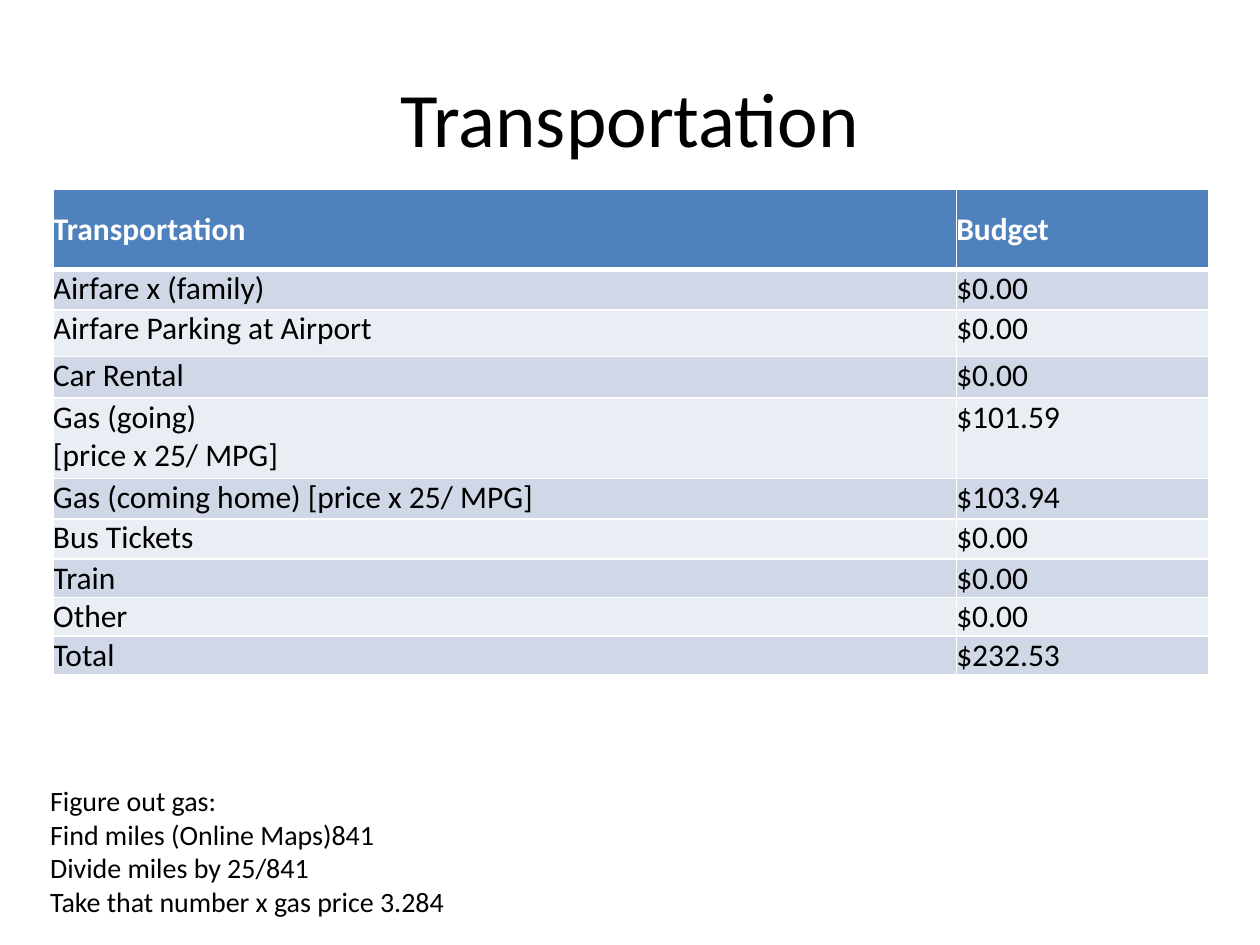
"""Builds a travel budget slide about transportation costs."""
from lxml import etree
from pptx import Presentation
from pptx import util as u
from pptx.dml import color
from pptx.enum import text
from pptx.oxml import ns

COLORS = {"ink": "000000", "paper": "FFFFFF", "header": "4F81BD",
          "odd": "D0D8E8", "even": "E9EDF4"}
BUDGET = [
    ("Transportation", "Budget", 0.64),
    ("Airfare x (family)", "$0.00", 0.32),
    ("Airfare Parking at Airport", "$0.00", 0.37),
    ("Car Rental", "$0.00", 0.33),
    ("Gas (going)\n[price x 25/ MPG]", "$101.59", 0.64),
    ("Gas (coming home) [price x 25/ MPG]", "$103.94", 0.32),
    ("Bus Tickets", "$0.00", 0.32),
    ("Train", "$0.00", 0.22),
    ("Other", "$0.00", 0.22),
    ("Total", "$232.53", 0.22),
]
COLUMN_WIDTHS = (7.17, 2)
GAS_STEPS = ("Figure out gas:\nFind miles (Online Maps)841\n"
             "Divide miles by 25/841\nTake that number x gas price 3.284")


def set_all(target, values):
    """Set each named attribute on the target."""
    for name, value in values.items():
        setattr(target, name, value)


def write(frame, words, size, ink="ink", bold=False, align=text.PP_ALIGN.LEFT):
    """Fill a text frame, one paragraph per line, in a single style."""
    frame.text = words
    for paragraph in frame.paragraphs:
        paragraph.alignment = align
        for run in paragraph.runs:
            set_all(run.font, {"name": "Calibri", "size": u.Pt(size), "bold": bold})
            run.font.color.rgb = color.RGBColor.from_string(COLORS[ink])


def add_words(slide, box, words, size, wrap=True, anchor=text.MSO_ANCHOR.TOP,
              fit=text.MSO_AUTO_SIZE.NONE, **style):
    """Add a text box at the given left, top, width and height."""
    frame = slide.shapes.add_textbox(*map(u.Inches, box)).text_frame
    write(frame, words, size, **style)
    set_all(frame, {"word_wrap": wrap, "vertical_anchor": anchor, "auto_size": fit})


def add_borders(cell, widths):
    """Draw white cell borders with a point width for each side."""
    properties = cell._tc.get_or_add_tcPr()
    for side, width in widths.items():
        line = etree.SubElement(properties, ns.qn(f"a:ln{side}"), w=str(u.Pt(width)))
        fill = etree.SubElement(line, ns.qn("a:solidFill"))
        etree.SubElement(fill, ns.qn("a:srgbClr"), val=COLORS["paper"])


def fill_cell(cell, words, row):
    """Style a budget cell according to its row."""
    header = row == 0
    shade = "header" if header else ("even", "odd")[row % 2]
    write(cell.text_frame, words, 18, "paper" if header else "ink", header)
    margins = dict.fromkeys(
        ("margin_left", "margin_top", "margin_right", "margin_bottom"), 0)
    anchor = text.MSO_ANCHOR.MIDDLE if header else text.MSO_ANCHOR.TOP
    set_all(cell, {**margins, "vertical_anchor": anchor})
    add_borders(cell, {"L": 1, "R": 1, "T": 3 if row == 1 else 1,
                       "B": 3 if header else 1})
    cell.fill.solid()
    cell.fill.fore_color.rgb = color.RGBColor.from_string(COLORS[shade])


def add_budget(slide, left, top):
    """Add the budget table."""
    height = sum(row[-1] for row in BUDGET)
    box = map(u.Inches, (left, top, sum(COLUMN_WIDTHS), height))
    budget = slide.shapes.add_table(len(BUDGET), len(COLUMN_WIDTHS), *box).table
    for column, width in zip(budget.columns, COLUMN_WIDTHS):
        column.width = u.Inches(width)
    for row, (*entries, row_height) in enumerate(BUDGET):
        budget.rows[row].height = u.Inches(row_height)
        for column, words in enumerate(entries):
            fill_cell(budget.cell(row, column), words, row)


def main():
    """Build and save the slide."""
    deck = Presentation()
    set_all(deck, {"slide_width": u.Inches(10), "slide_height": u.Inches(7.5)})
    slide = deck.slides.add_slide(deck.slide_layouts[6])
    add_words(slide, (0.5, 0.3, 9, 1.25), "Transportation", 44,
              anchor=text.MSO_ANCHOR.MIDDLE, align=text.PP_ALIGN.CENTER)
    add_budget(slide, 0.42, 1.5)
    add_words(slide, (0.3, 6.17, 3.37, 1.18), GAS_STEPS, 16, wrap=False,
              fit=text.MSO_AUTO_SIZE.SHAPE_TO_FIT_TEXT)
    deck.save("out.pptx")


if __name__ == "__main__":
    main()
